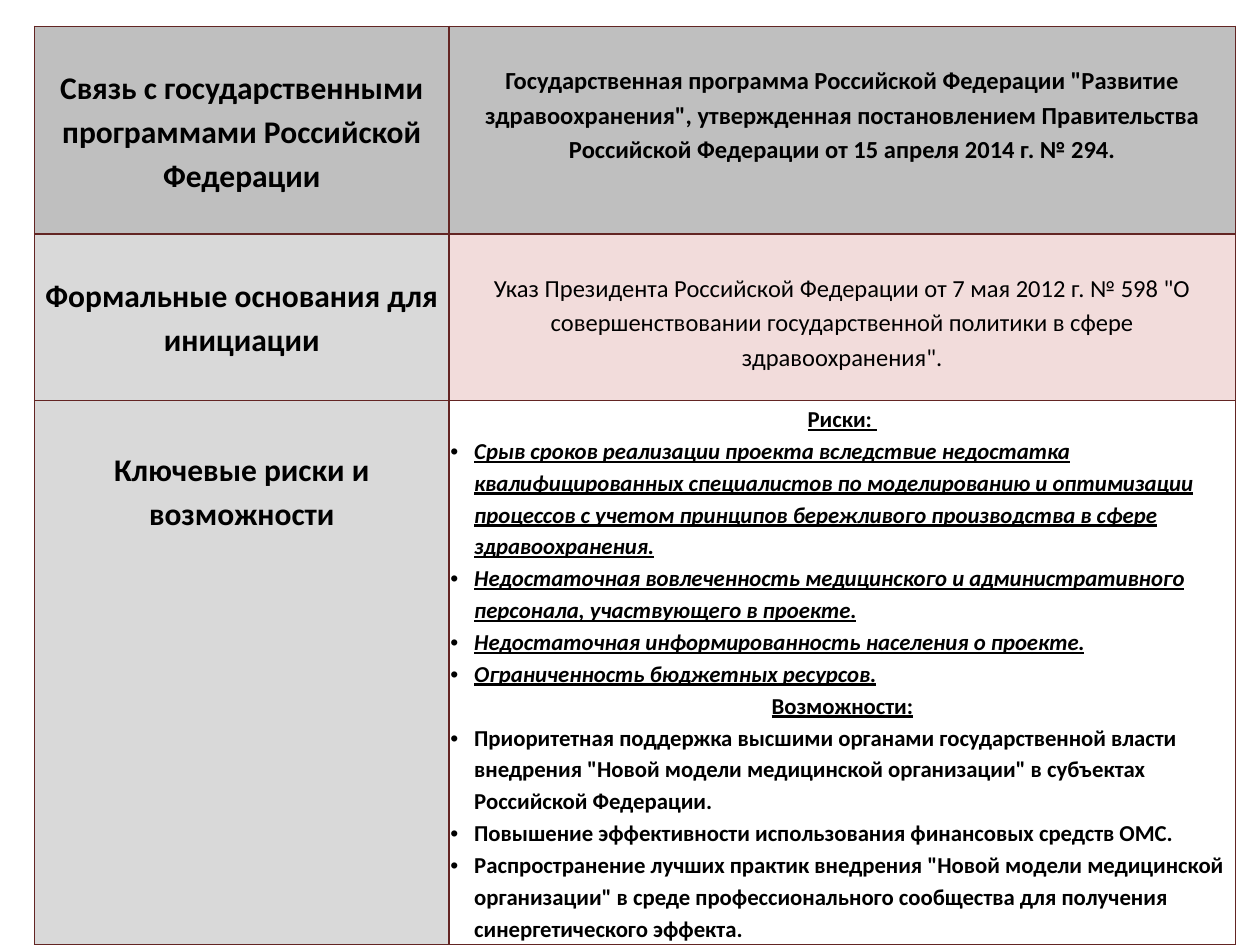
from dataclasses import dataclass

from lxml.etree import SubElement
from pptx import Presentation
from pptx.dml.color import RGBColor
from pptx.enum.text import PP_ALIGN as Align
from pptx.oxml.ns import qn
from pptx.util import Cm, Pt


@dataclass(frozen=True)
class Theme:
    font: str = "Calibri"
    text: str = "000000"
    border: str = "632523"
    dark: str = "BFBFBF"
    light: str = "D9D9D9"
    pink: str = "F2DCDB"
    white: str = "FFFFFF"
    heading: int = 18
    body: int = 14
    listing: int = 13
    border_width: int = 1
    line_spacing: float = 1.15


class SlideBuilder:
    def __init__(self, page, theme):
        self.page = page
        self.theme = theme

    def table(self, left, top, widths, heights):
        frame = self.page.shapes.add_table(
            len(heights), len(widths), Cm(left), Cm(top), Cm(sum(widths)), Cm(sum(heights)))
        table = frame.table
        table.first_row = table.horz_banding = False
        for column, width in zip(table.columns, widths):
            column.width = Cm(width)
        for row, height in zip(table.rows, heights):
            row.height = Cm(height)
        return table

    def cell(self, cell, fill, top_margin=0.03):
        cell.margin_left = cell.margin_right = cell.margin_bottom = Cm(0.03)
        cell.margin_top = Cm(top_margin)
        properties = cell._tc.get_or_add_tcPr()
        for side in ("a:lnL", "a:lnR", "a:lnT", "a:lnB"):
            line = SubElement(properties, qn(side), w=str(Pt(self.theme.border_width)))
            solid = SubElement(line, qn("a:solidFill"))
            SubElement(solid, qn("a:srgbClr"), val=self.theme.border)
        cell.fill.solid()
        cell.fill.fore_color.rgb = RGBColor.from_string(fill)

    def paragraph(self, para, text, size, bold=True, italic=None, underline=None, bullet=False):
        para.text = text
        para.line_spacing = self.theme.line_spacing
        para.alignment = Align.LEFT if bullet else Align.CENTER
        if bullet:
            properties = para._p.get_or_add_pPr()
            properties.set("marL", str(Cm(0.48)))
            properties.set("indent", str(-Cm(0.48)))
            SubElement(properties, qn("a:buFont"), typeface="Arial")
            SubElement(properties, qn("a:buChar"), char="•")
        for span in para.runs:
            font = span.font
            font.name, font.size = self.theme.font, Pt(size)
            font.bold, font.italic, font.underline = bold, italic, underline
            font.color.rgb = RGBColor.from_string(self.theme.text)

    def text_cell(self, cell, text, fill, top_margin, size, bold=True):
        self.cell(cell, fill, top_margin)
        self.paragraph(cell.text_frame.paragraphs[0], text, size, bold)

    def list_cell(self, cell, sections, fill):
        """Fill a cell with underlined titles, each followed by its bullets."""
        self.cell(cell, fill)
        size = self.theme.listing
        box = cell.text_frame
        for number, (title, items, emphasis) in enumerate(sections):
            para = box.add_paragraph() if number else box.paragraphs[0]
            self.paragraph(para, title, size, underline=True)
            for item in items:
                self.paragraph(box.add_paragraph(), item, size, italic=emphasis,
                               underline=emphasis, bullet=True)


RISKS = [
    "Срыв сроков реализации проекта вследствие недостатка квалифицированных специалистов "
    "по моделированию и оптимизации процессов с учетом принципов бережливого производства "
    "в сфере здравоохранения.",
    "Недостаточная вовлеченность медицинского и административного персонала, "
    "участвующего в проекте.",
    "Недостаточная информированность населения о проекте.",
    "Ограниченность бюджетных ресурсов.",
]
OPPORTUNITIES = [
    'Приоритетная поддержка высшими органами государственной власти внедрения "Новой модели '
    'медицинской организации" в субъектах Российской Федерации.',
    "Повышение эффективности использования финансовых средств ОМС.",
    'Распространение лучших практик внедрения "Новой модели медицинской организации" в среде '
    "профессионального сообщества для получения синергетического эффекта.",
]
STATE_PROGRAM = (
    'Государственная программа Российской Федерации "Развитие здравоохранения", утвержденная '
    "постановлением Правительства Российской Федерации от 15 апреля 2014 г. № 294.")
DECREE = (
    'Указ Президента Российской Федерации от 7 мая 2012 г. № 598 "О совершенствовании '
    'государственной политики в сфере здравоохранения".')


def main():
    deck = Presentation()
    deck.slide_width, deck.slide_height = Cm(25.4), Cm(19.05)
    theme = Theme()
    builder = SlideBuilder(deck.slides.add_slide(deck.slide_layouts[6]), theme)
    table = builder.table(0.7, 0.53, widths=[8.35, 15.86], heights=[4.19, 3.35, 10.8])

    headings = [
        ("Связь с государственными программами Российской Федерации", theme.dark, 0.75),
        ("Формальные основания для инициации", theme.light, 0.75),
        ("Ключевые риски и возможности", theme.light, 0.92),
    ]
    for row, (text, fill, top_margin) in enumerate(headings):
        builder.text_cell(table.cell(row, 0), text, fill, top_margin, theme.heading)

    builder.text_cell(table.cell(0, 1), STATE_PROGRAM, theme.dark, 0.72, theme.body)
    builder.text_cell(table.cell(1, 1), DECREE, theme.pink, 0.72, theme.body, bold=False)
    builder.list_cell(table.cell(2, 1), [("Риски: ", RISKS, True),
                                         ("Возможности:", OPPORTUNITIES, False)], theme.white)
    deck.save("out.pptx")


if __name__ == "__main__":
    main()
